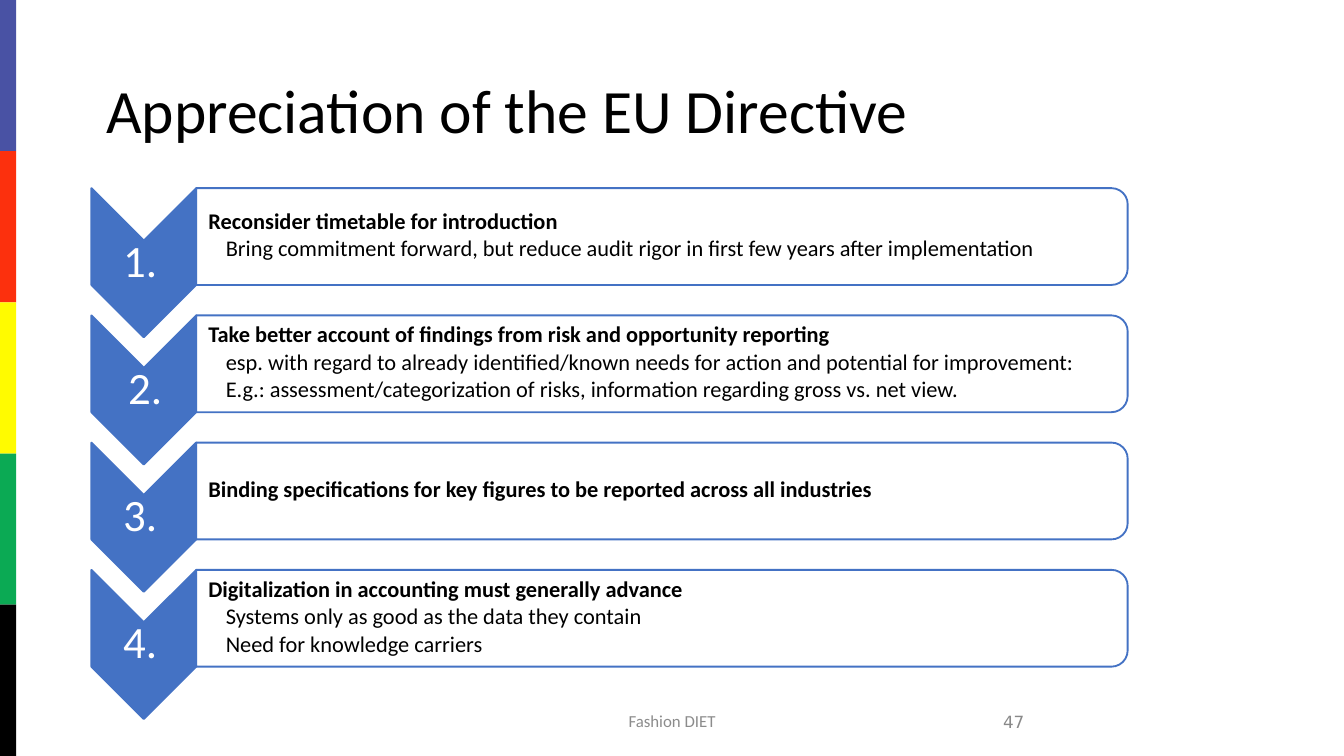
from dataclasses import dataclass

import pptx
import pptx.dml.color
import pptx.enum.shapes
import pptx.enum.text
import pptx.oxml
import pptx.oxml.ns
import pptx.util
from pptx.util import Inches

Align = pptx.enum.text.PP_ALIGN
Preset = pptx.enum.shapes.MSO_SHAPE


@dataclass(frozen=True)
class Theme:
    font: str = "Calibri"
    number_font: str = "DejaVu Sans"
    text: str = "000000"
    light: str = "FFFFFF"
    accent: str = "4472C4"
    footer: str = "8C8C8C"
    page_number: str = "898989"
    stripes: tuple[str, ...] = ("4952A4", "FC300D", "FFFB00", "0BAA54", "000000")
    title_size: float = 33
    step_size: float = 24
    body_size: float = 12
    footer_size: float = 9


@dataclass(frozen=True)
class Box:
    left: float
    top: float
    width: float
    height: float

    def lengths(self) -> tuple:
        return tuple(Inches(v) for v in (self.left, self.top, self.width, self.height))

    def before_quarter_turn(self) -> "Box":
        shift = (self.width - self.height) / 2
        return Box(self.left + shift, self.top - shift, self.height, self.width)


@dataclass(frozen=True)
class Step:
    label: str
    heading: str
    details: tuple[str, ...] = ()


THEME = Theme()
SLIDE_WIDTH = 10
SLIDE_HEIGHT = SLIDE_WIDTH * 9 / 16
FIRST_TOP, LAST_TOP = 1.4, 4.24
STEPS = (
    Step("1. ", "Reconsider timetable for introduction", (
        "Bring commitment forward, but reduce audit rigor in first few years after implementation",
    )),
    Step("2.", "Take better account of findings from risk and opportunity reporting", (
        "esp. with regard to already identified/known needs for action and potential for improvement:",
        "E.g.: assessment/categorization of risks, information regarding gross vs. net view.",
    )),
    Step("3. ", "Binding specifications for key figures to be reported across all industries"),
    Step("4. ", "Digitalization in accounting must generally advance", (
        "Systems only as good as the data they contain",
        "Need for knowledge carriers",
    )),
)


def rgb(color: str) -> pptx.dml.color.RGBColor:
    return pptx.dml.color.RGBColor.from_string(color)


def set_font(paragraph, size: float, color: str, name: str = THEME.font, bold: bool = False) -> None:
    font = paragraph.font
    font.name, font.size, font.bold = name, pptx.util.Pt(size), bold
    font.color.rgb = rgb(color)


def add_preset(slide, preset, box: Box, fill: str, line: str | None = None):
    shape = slide.shapes.add_shape(preset, *box.lengths())
    shape.shadow.inherit = False
    shape.fill.solid()
    shape.fill.fore_color.rgb = rgb(fill)
    if line:
        shape.line.color.rgb = rgb(line)
        shape.line.width = pptx.util.Pt(1)
    else:
        shape.line.fill.background()
    return shape


def add_turned(slide, preset, box: Box, fill: str):
    shape = add_preset(slide, preset, box.before_quarter_turn(), fill, THEME.accent)
    shape.rotation = 90
    return shape


def add_text_frame(slide, box: Box, left_inset: float, inset: float):
    frame = slide.shapes.add_textbox(*box.lengths()).text_frame
    frame.word_wrap = True
    frame.vertical_anchor = pptx.enum.text.MSO_ANCHOR.MIDDLE
    frame.margin_left = Inches(left_inset)
    frame.margin_top = frame.margin_right = frame.margin_bottom = Inches(inset)
    return frame


def add_label(slide, box: Box, text: str, size: float, color: str,
              align=Align.CENTER, name: str = THEME.font, inset: float = 0.1) -> None:
    paragraph = add_text_frame(slide, box, inset, inset).paragraphs[0]
    paragraph.text = text
    paragraph.alignment = align
    paragraph.line_spacing = 0.9
    set_font(paragraph, size, color, name)


def add_step(slide, step: Step, top: float) -> None:
    chevron = add_turned(slide, Preset.CHEVRON, Box(0.68, top, 0.78, 1.11), THEME.accent)
    chevron.adjustments[0] = 0.5
    add_label(slide, Box(0.69, top + 0.39, 0.78, 0.33), step.label,
              THEME.step_size, THEME.light, inset=0.02)

    panel = add_turned(slide, Preset.ROUND_2_SAME_RECTANGLE, Box(1.46, top, 6.93, 0.72), THEME.light)
    color = panel.fill._xPr.find(".//" + pptx.oxml.ns.qn("a:srgbClr"))
    alpha = pptx.oxml.parse_xml(f'<a:alpha {pptx.oxml.ns.nsdecls("a")} val="90000"/>')
    color.append(alpha)

    frame = add_text_frame(slide, Box(1.46, top + 0.03, 6.89, 0.65), 0.09, 0.01)
    for index, text in enumerate((step.heading, *step.details)):
        paragraph = frame.add_paragraph() if index else frame.paragraphs[0]
        paragraph.text = text
        paragraph.line_spacing = 0.9
        paragraph.space_after = pptx.util.Pt(1.8)
        if index:
            paragraph._p.get_or_add_pPr().set("marL", str(Inches(0.13)))
        set_font(paragraph, THEME.body_size, THEME.text, bold=index == 0)


def add_title(slide, text: str) -> None:
    title = slide.shapes.title
    title.left, title.top, title.width, title.height = Box(0.69, 0.3, 8.62, 1.09).lengths()
    title.text_frame.vertical_anchor = pptx.enum.text.MSO_ANCHOR.MIDDLE
    paragraph = title.text_frame.paragraphs[0]
    paragraph.text = text
    paragraph.alignment = Align.LEFT
    paragraph.line_spacing = 0.9
    set_font(paragraph, THEME.title_size, THEME.text)


def main() -> None:
    presentation = pptx.Presentation()
    presentation.slide_width = Inches(SLIDE_WIDTH)
    presentation.slide_height = Inches(SLIDE_HEIGHT)
    slide = presentation.slides.add_slide(presentation.slide_layouts.get_by_name("Title Only"))

    stripe_height = SLIDE_HEIGHT / len(THEME.stripes)
    for index, color in enumerate(THEME.stripes):
        add_preset(slide, Preset.RECTANGLE, Box(0, index * stripe_height, 0.12, stripe_height), color)

    add_title(slide, "Appreciation of the EU Directive")
    pitch = (LAST_TOP - FIRST_TOP) / (len(STEPS) - 1)
    for index, step in enumerate(STEPS):
        add_step(slide, step, FIRST_TOP + index * pitch)

    add_label(slide, Box(3.31, 5.22, 3.38, 0.3), "Fashion DIET", THEME.footer_size, THEME.footer)
    add_label(slide, Box(5.47, 5.23, 2.25, 0.3), "47", THEME.footer_size, THEME.page_number,
              Align.RIGHT, THEME.number_font)
    presentation.save("out.pptx")


if __name__ == "__main__":
    main()
